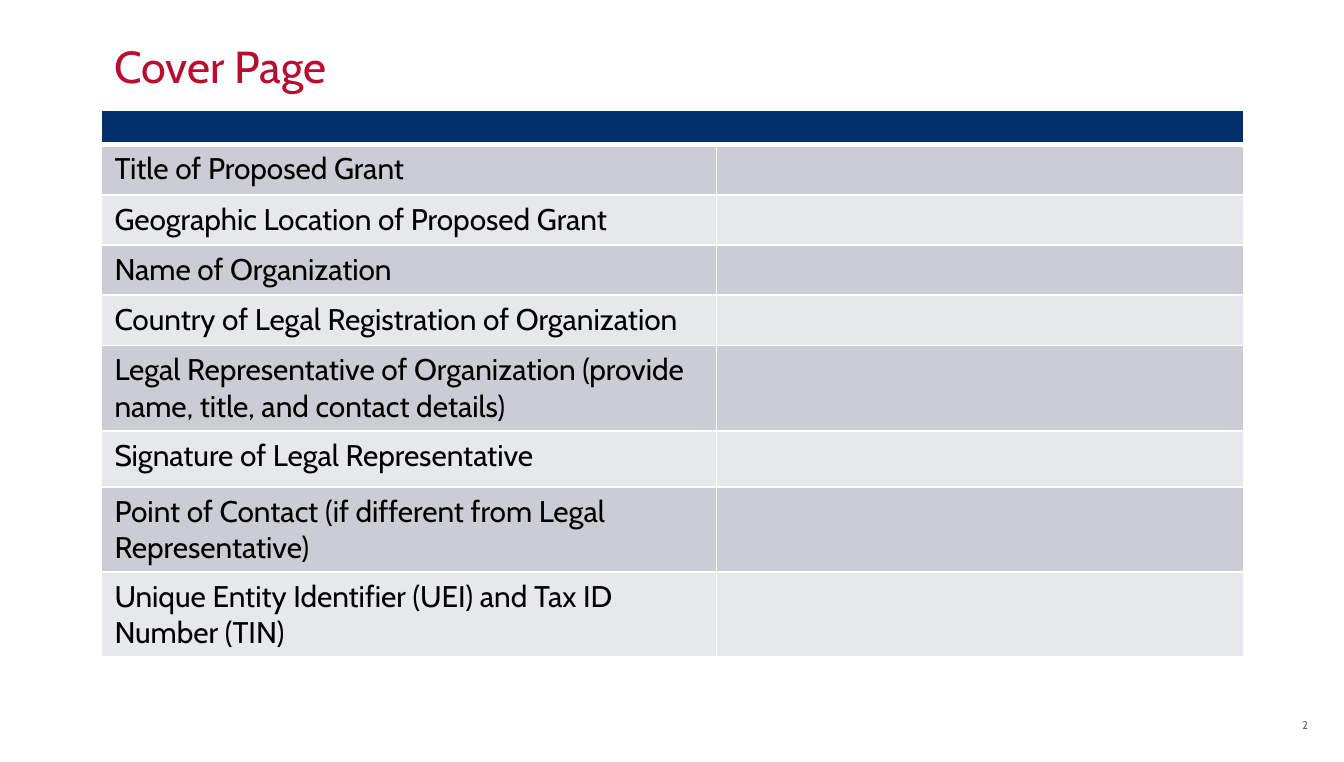
from dataclasses import dataclass

from lxml import etree
from pptx import Presentation
from pptx.dml.color import RGBColor
from pptx.enum import text
from pptx.oxml import ns
from pptx.util import Cm, Pt


@dataclass(frozen=True)
class Theme:
    font: str = "Cabin"
    red: str = "BA0C2F"
    navy: str = "002F6C"
    dark_band: str = "CCCDD4"
    light_band: str = "E7E8EB"
    white: str = "FFFFFF"
    black: str = "000000"
    gray: str = "6C6463"
    title_size: int = 24
    body_size: int = 16
    header_size: int = 8
    number_size: int = 6


class SlideBuilder:
    def __init__(self, slide, theme):
        self.slide = slide
        self.theme = theme

    def style(self, paragraph, size, color, align=text.PP_ALIGN.LEFT):
        paragraph.alignment = align
        paragraph.font.name = self.theme.font
        paragraph.font.size = Pt(size)
        paragraph.font.color.rgb = RGBColor.from_string(color)

    def title(self, words, left, top, width, height):
        box = self.slide.shapes.title
        box.left, box.top, box.width, box.height = map(Cm, (left, top, width, height))
        frame = box.text_frame
        frame.text = words
        frame.vertical_anchor = text.MSO_ANCHOR.BOTTOM
        frame.auto_size = text.MSO_AUTO_SIZE.NONE
        self.style(frame.paragraphs[0], self.theme.title_size, self.theme.red)

    def page_number(self, words, left, top, width, height):
        box = self.slide.shapes.add_textbox(*map(Cm, (left, top, width, height)))
        frame = box.text_frame
        frame.word_wrap = True
        frame.vertical_anchor = text.MSO_ANCHOR.MIDDLE
        frame.text = words
        self.style(frame.paragraphs[0], self.theme.number_size, self.theme.gray,
                   text.PP_ALIGN.RIGHT)

    def borders(self, cell, bottom_width):
        properties = cell._tc.get_or_add_tcPr()
        for index, side in enumerate("LRTB"):
            width = bottom_width if side == "B" else 1
            line = etree.Element(ns.qn(f"a:ln{side}"), w=str(Pt(width)))
            fill = etree.SubElement(line, ns.qn("a:solidFill"))
            etree.SubElement(fill, ns.qn("a:srgbClr"), val=self.theme.white)
            properties.insert(index, line)

    def cell(self, cell, words, size, color, bottom_width=1):
        cell.fill.solid()
        cell.fill.fore_color.rgb = RGBColor.from_string(color)
        self.borders(cell, bottom_width)
        paragraph = cell.text_frame.paragraphs[0]
        if words:
            paragraph.text = words
        else:
            # The end mark sets the line height of an empty cell
            etree.SubElement(paragraph._p, ns.qn("a:endParaRPr"), sz=str(size * 100))
        self.style(paragraph, size, self.theme.black)

    def form(self, rows, left, top, widths, header_height):
        height = header_height + sum(row_height for _, row_height in rows)
        table = self.slide.shapes.add_table(
            len(rows) + 1, len(widths),
            *map(Cm, (left, top, sum(widths), height))).table
        for column, width in zip(table.columns, widths):
            column.width = Cm(width)

        # Header band across both columns
        table.rows[0].height = Cm(header_height)
        for cell in table.rows[0].cells:
            self.cell(cell, "", self.theme.header_size, self.theme.navy, 3)
        table.cell(0, 0).merge(table.cell(0, len(widths) - 1))

        # Labels on the left, blanks to fill in on the right
        for index, (label, row_height) in enumerate(rows, start=1):
            band = self.theme.dark_band if index % 2 else self.theme.light_band
            table.rows[index].height = Cm(row_height)
            for cell, words in zip(table.rows[index].cells, (label, "")):
                self.cell(cell, words, self.theme.body_size, band)


SINGLE, SIGNATURE, DOUBLE = 0.95, 1.06, 1.61
FIELDS = [
    ("Title of Proposed Grant", SINGLE),
    ("Geographic Location of Proposed Grant", SINGLE),
    ("Name of Organization", SINGLE),
    ("Country of Legal Registration of Organization", SINGLE),
    ("Legal Representative of Organization (provide name, title, and contact details)", DOUBLE),
    ("Signature of Legal Representative", SIGNATURE),
    ("Point of Contact (if different from Legal Representative)", DOUBLE),
    ("Unique Entity Identifier (UEI) and Tax ID Number (TIN)", DOUBLE),
]


def main():
    deck = Presentation()
    deck.slide_width, deck.slide_height = Cm(25.4), Cm(14.4)
    page = SlideBuilder(deck.slides.add_slide(deck.slide_layouts[5]), Theme())

    page.page_number("2", 19.05, 13.46, 5.92, 0.5)
    page.title("Cover Page", 1.91, 0.61, 21.59, 1.27)
    page.form(FIELDS, 1.91, 2.09, widths=(11.63, 9.96), header_height=0.64)

    deck.save("out.pptx")


if __name__ == "__main__":
    main()
